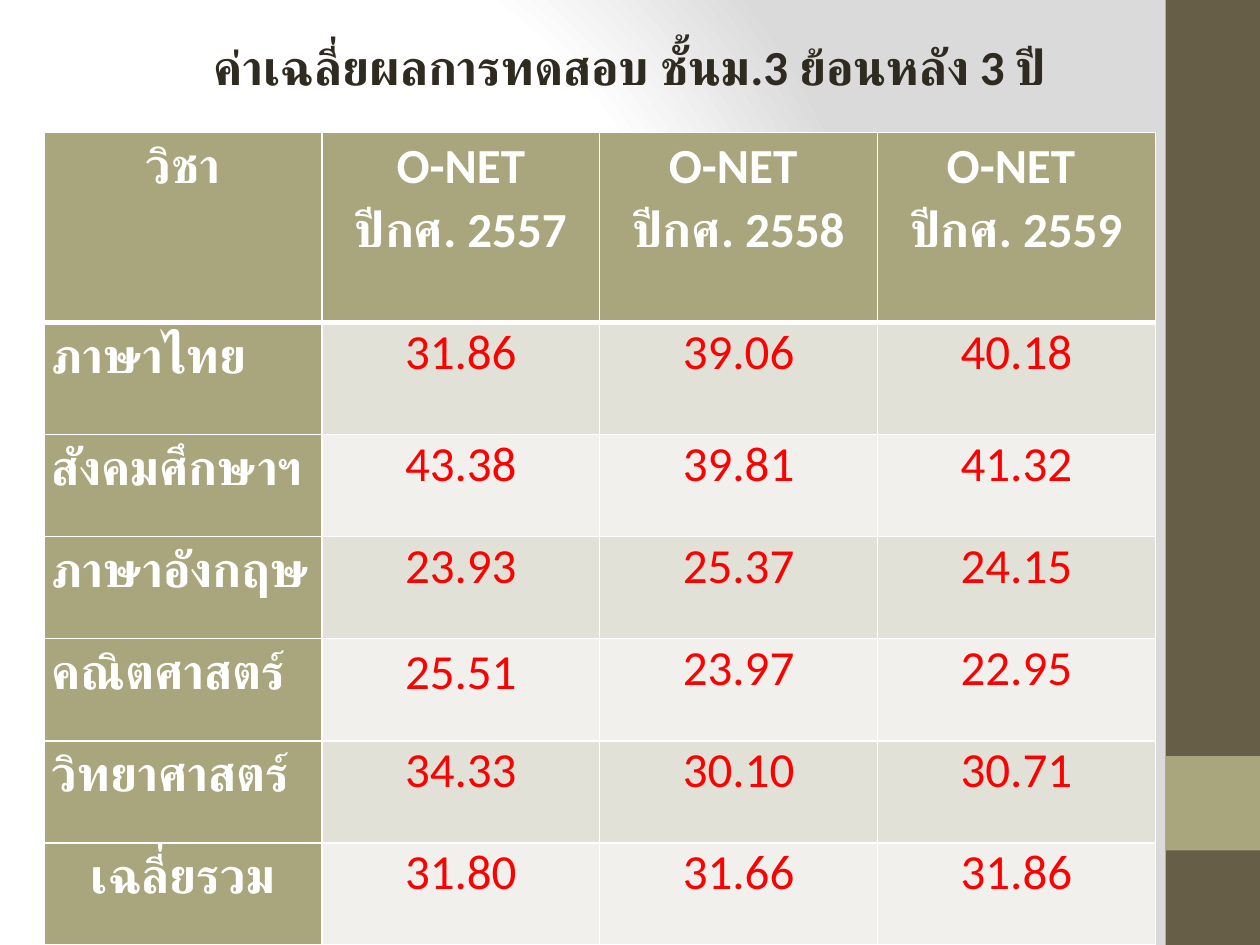
from lxml import etree
from pptx import Presentation
from pptx.dml.color import RGBColor
from pptx.enum.shapes import MSO_SHAPE
from pptx.enum.text import MSO_ANCHOR, PP_ALIGN
from pptx.oxml import parse_xml
from pptx.oxml.ns import nsdecls, qn
from pptx.util import Inches, Pt

COLORS = {
    "white": "FFFFFF", "shade": "DADADA", "brown": "675E47", "olive": "A9A57C",
    "band_dark": "E2E1D7", "band_light": "F1F0EC", "score": "FF0000", "title": "2F2B20",
}
FONT = "Calibri"
HEADER = ["วิชา", " O-NET \nปีกศ. 2557", "O-NET \nปีกศ. 2558", "O-NET \nปีกศ. 2559"]
SCORES = [
    ["ภาษาไทย", " 31.86 ", "39.06", "40.18"],
    ["สังคมศึกษาฯ", " 43.38 ", "39.81", "41.32"],
    ["ภาษาอังกฤษ", " 23.93 ", "25.37", "24.15"],
    ["คณิตศาสตร์", " 25.51 ", "23.97", "22.95"],
    ["วิทยาศาสตร์", " 34.33 ", "30.10", "30.71"],
    ["เฉลี่ยรวม", "31.80", "31.66", "31.86"],
]
ROW_HEIGHTS = [1.51, 0.89] + [0.81] * 5


def color(name):
    return RGBColor.from_string(COLORS[name])


def write_text(text_frame, text, color_name, bold, align, line_spacing=None):
    text_frame.text = text
    for paragraph in text_frame.paragraphs:
        paragraph.alignment = align
        if line_spacing:
            paragraph.line_spacing = line_spacing
        for run in paragraph.runs:
            run.font.size = Pt(28)
            run.font.name = FONT
            run.font.bold = bold
            run.font.color.rgb = color(color_name)
            # Thai letters take the complex-script font
            etree.SubElement(run.font._element, qn("a:cs")).set("typeface", FONT)


def set_background(slide):
    slide.background.fill.solid()
    solid = next(slide._element.iter(qn("a:solidFill")))
    stops = "".join(
        f'<a:gs pos="{position * 1000}"><a:srgbClr val="{COLORS[name]}"/></a:gs>'
        for position, name in [(0, "white"), (75, "white"), (100, "shade")])
    gradient = parse_xml(
        f'<a:gradFill {nsdecls("a")} rotWithShape="1"><a:gsLst>{stops}</a:gsLst>'
        '<a:path path="circle"><a:fillToRect l="20000" t="50000" r="100000" b="50000"/>'
        '</a:path></a:gradFill>')
    solid.getparent().replace(solid, gradient)


def add_side_bar(slide, left, top, width, height):
    accent_top = top + Inches(6)
    for y, h, name in [(top, height, "brown"), (accent_top, width, "olive")]:
        shape = slide.shapes.add_shape(MSO_SHAPE.RECTANGLE, left, y, width, h)
        shape.shadow.inherit = False
        shape.fill.solid()
        shape.fill.fore_color.rgb = color(name)
        shape.line.fill.background()


def set_borders(cell, bottom_width):
    properties = cell._tc.get_or_add_tcPr()
    widths = {"lnL": 1, "lnR": 1, "lnT": 1, "lnB": bottom_width}
    for index, (tag, width) in enumerate(widths.items()):
        properties.insert(index, parse_xml(
            f'<a:{tag} {nsdecls("a")} w="{Pt(width)}"><a:solidFill>'
            f'<a:srgbClr val="{COLORS["white"]}"/></a:solidFill></a:{tag}>'))


def add_score_table(slide, left, top, width, height):
    rows = [HEADER] + SCORES
    table = slide.shapes.add_table(len(rows), len(HEADER), left, top, width, height).table
    last = len(rows) - 1
    for r, values in enumerate(rows):
        table.rows[r].height = Inches(ROW_HEIGHTS[r])
        for c, text in enumerate(values):
            cell = table.cell(r, c)
            cell.margin_left = cell.margin_right = Inches(0.06)
            cell.margin_top = cell.margin_bottom = 0
            is_label = r == 0 or c == 0
            band = "band_dark" if r % 2 else "band_light"
            cell.fill.solid()
            cell.fill.fore_color.rgb = color("olive" if is_label else band)
            is_subject = c == 0 and 0 < r < last
            write_text(cell.text_frame, text, "white" if is_label else "score", is_label,
                       PP_ALIGN.LEFT if is_subject else PP_ALIGN.CENTER,
                       1.07 if is_label else None)
            # The header has a heavier rule below it
            set_borders(cell, 3 if r == 0 else 1)
    # The first mathematics score sits slightly lower than its neighbours
    lowered = table.cell(4, 1)
    lowered.vertical_anchor = MSO_ANCHOR.BOTTOM
    lowered.margin_bottom = Inches(0.3)


def add_title(slide, left, top, width, height):
    text_frame = slide.shapes.add_textbox(left, top, width, height).text_frame
    text_frame.word_wrap = True
    text_frame.vertical_anchor = MSO_ANCHOR.MIDDLE
    write_text(text_frame, "ค่าเฉลี่ยผลการทดสอบ ชั้นม.3 ย้อนหลัง 3 ปี", "title", True,
               PP_ALIGN.CENTER)


def main():
    presentation = Presentation()
    presentation.slide_width, presentation.slide_height = Inches(10), Inches(7.5)
    slide = presentation.slides.add_slide(presentation.slide_layouts[6])
    set_background(slide)
    add_side_bar(slide, Inches(9.25), 0, Inches(0.75), Inches(7.5))
    add_score_table(slide, Inches(0.35), Inches(1.05), Inches(8.82), Inches(sum(ROW_HEIGHTS)))
    add_title(slide, 0, Inches(0.24), Inches(10), Inches(0.57))
    presentation.save("out.pptx")


if __name__ == "__main__":
    main()
